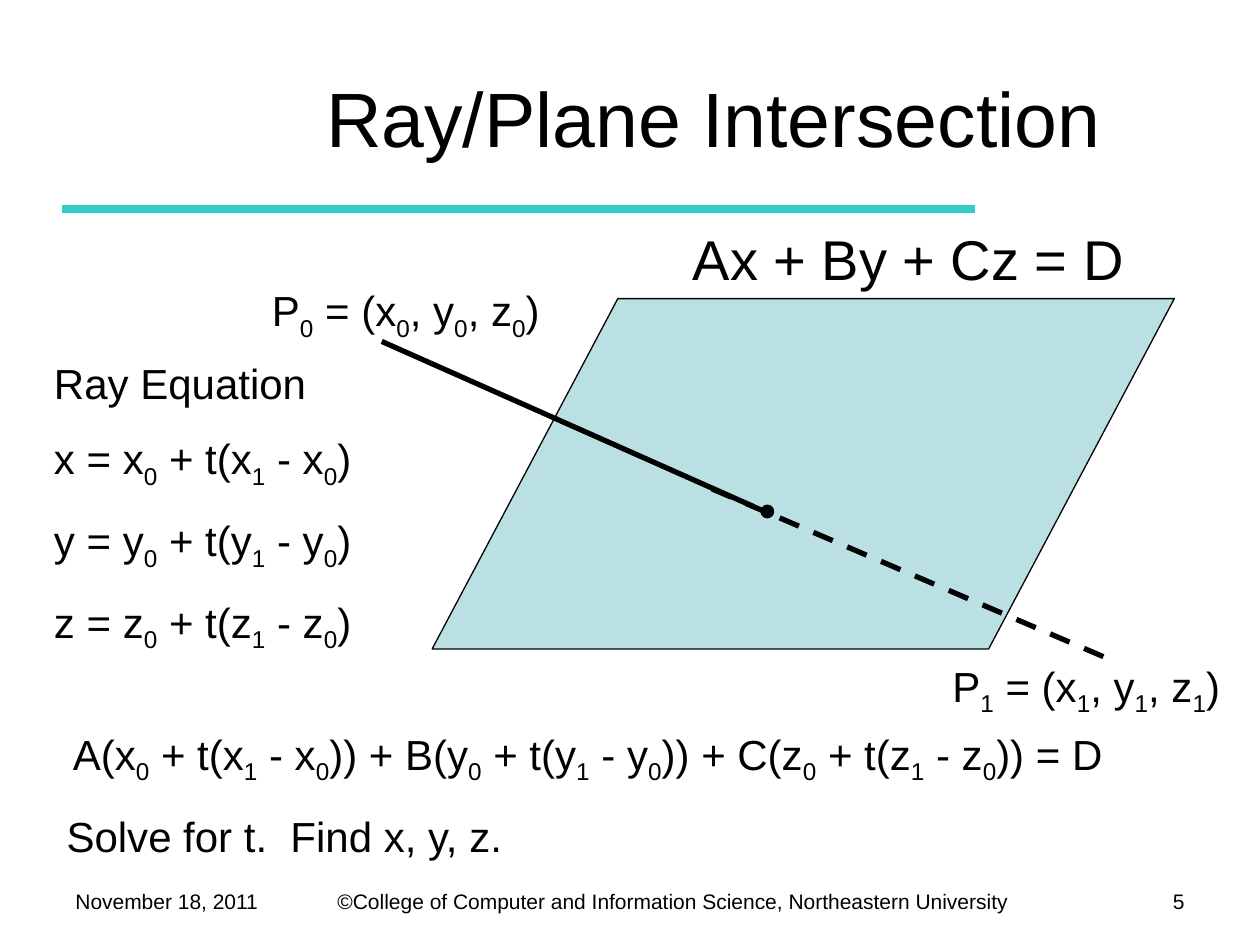
"""Build the ray/plane intersection slide."""
import dataclasses

import pptx
import pptx.dml.color
import pptx.enum.dml
import pptx.enum.shapes
import pptx.enum.text
import pptx.oxml
import pptx.oxml.ns
import pptx.util

ALIGN = pptx.enum.text.PP_ALIGN
ANCHOR = pptx.enum.text.MSO_ANCHOR
SHAPE = pptx.enum.shapes.MSO_SHAPE
DASH = pptx.enum.dml.MSO_LINE.DASH


@dataclasses.dataclass(frozen=True)
class Theme:
    font: str = "Arial"
    ink: str = "000000"
    rule: str = "33CCCC"
    plane: str = "BBE0E3"
    title: int = 44
    equation: int = 32
    body: int = 24
    footer: int = 12
    paragraph_gap: int = 14
    subscript: str = "-25000"
    outline: float = 0.75
    ray: float = 3
    rule_width: float = 4.5


class SlideBuilder:
    EMU_PER_PX = 9144

    def __init__(self, slide, theme):
        self.slide = slide
        self.theme = theme

    def emu(self, *lengths):
        return [pptx.util.Emu(length * self.EMU_PER_PX) for length in lengths]

    def color(self, value):
        return pptx.dml.color.RGBColor.from_string(value)

    def run(self, paragraph, text, size, subscript=False):
        run = paragraph.add_run()
        run.text = text
        run.font.name = self.theme.font
        run.font.size = pptx.util.Pt(size)
        run.font.color.rgb = self.color(self.theme.ink)
        if subscript:
            run.font._element.set("baseline", self.theme.subscript)

    def text(self, box, lines, size, align=ALIGN.LEFT, anchor=ANCHOR.TOP):
        frame = self.slide.shapes.add_textbox(*self.emu(*box)).text_frame
        frame.word_wrap = True
        frame.vertical_anchor = anchor
        for index, line in enumerate(lines):
            paragraph = frame.add_paragraph() if index else frame.paragraphs[0]
            paragraph.alignment = align
            if index:
                paragraph.space_before = pptx.util.Pt(self.theme.paragraph_gap)
            first, *rest = line.split("_")
            self.run(paragraph, first, size)
            for part in rest:
                self.run(paragraph, part[0], size, subscript=True)
                if part[1:]:
                    self.run(paragraph, part[1:], size)

    def shape(self, kind, box, fill):
        shape = self.slide.shapes.add_shape(kind, *self.emu(*box))
        shape.shadow.inherit = False
        shape.fill.solid()
        shape.fill.fore_color.rgb = self.color(fill)
        shape.line.color.rgb = self.color(self.theme.ink)
        shape.line.width = pptx.util.Pt(self.theme.outline)
        return shape

    def line(self, start, end, color, width, dash=None):
        connector = self.slide.shapes.add_connector(
            pptx.enum.shapes.MSO_CONNECTOR.STRAIGHT, *self.emu(*start, *end))
        connector.line.color.rgb = self.color(color)
        connector.line.width = pptx.util.Pt(width)
        if dash is not None:
            connector.line.dash_style = dash
        connector._element.spPr.append(
            pptx.oxml.parse_xml(f"<a:effectLst {pptx.oxml.ns.nsdecls('a')}/>"))


def ray(axis):
    return f"{axis}_0 + t({axis}_1 - {axis}_0)"


def point(index):
    coordinates = ", ".join(f"{axis}_{index}" for axis in "xyz")
    return f"P_{index} = ({coordinates})"


def main():
    theme = Theme()
    presentation = pptx.Presentation()
    presentation.slide_width = pptx.util.Inches(10)
    presentation.slide_height = pptx.util.Inches(7.5)
    slide = presentation.slides.add_slide(presentation.slide_layouts[6])
    builder = SlideBuilder(slide, theme)

    builder.text((258, 700, 566, 30),
                 ["©College of Computer and Information Science, Northeastern University"],
                 theme.footer)
    builder.line((49, 166), (774, 166), theme.rule, theme.rule_width)
    builder.text((50, 700, 175, 33), ["November 18, 2011"], theme.footer)
    builder.text((867, 700, 83, 35), ["5"], theme.footer, align=ALIGN.RIGHT)
    builder.text((183, 30, 767, 125), ["Ray/Plane Intersection"], theme.title,
                 align=ALIGN.CENTER, anchor=ANCHOR.MIDDLE)
    builder.text((540, 173, 383, 71), ["Ax + By + Cz = D"], theme.equation)

    plane = builder.shape(SHAPE.PARALLELOGRAM, (343, 237, 589, 278), theme.plane)
    plane.adjustments[0] = 0.53
    builder.line((303, 271), (598, 402), theme.ink, theme.ray)
    builder.line((565, 388), (880, 523), theme.ink, theme.ray, DASH)
    builder.text((206, 221, 272, 50), [point(0)], theme.body)
    builder.text((746, 519, 242, 50), [point(1)], theme.body)
    builder.shape(SHAPE.OVAL, (604, 401, 10, 10), theme.ink)

    equations = [f"{axis} = {ray(axis)}" for axis in "xyz"]
    builder.text((33, 279, 281, 230), ["Ray Equation", *equations], theme.body)
    terms = [f"{factor}({ray(axis)})" for factor, axis in zip("ABC", "xyz")]
    builder.text((48, 573, 879, 50), [" + ".join(terms) + " = D"], theme.body)
    builder.text((43, 638, 405, 50), ["Solve for t.  Find x, y, z."], theme.body)

    presentation.save("out.pptx")


if __name__ == "__main__":
    main()
